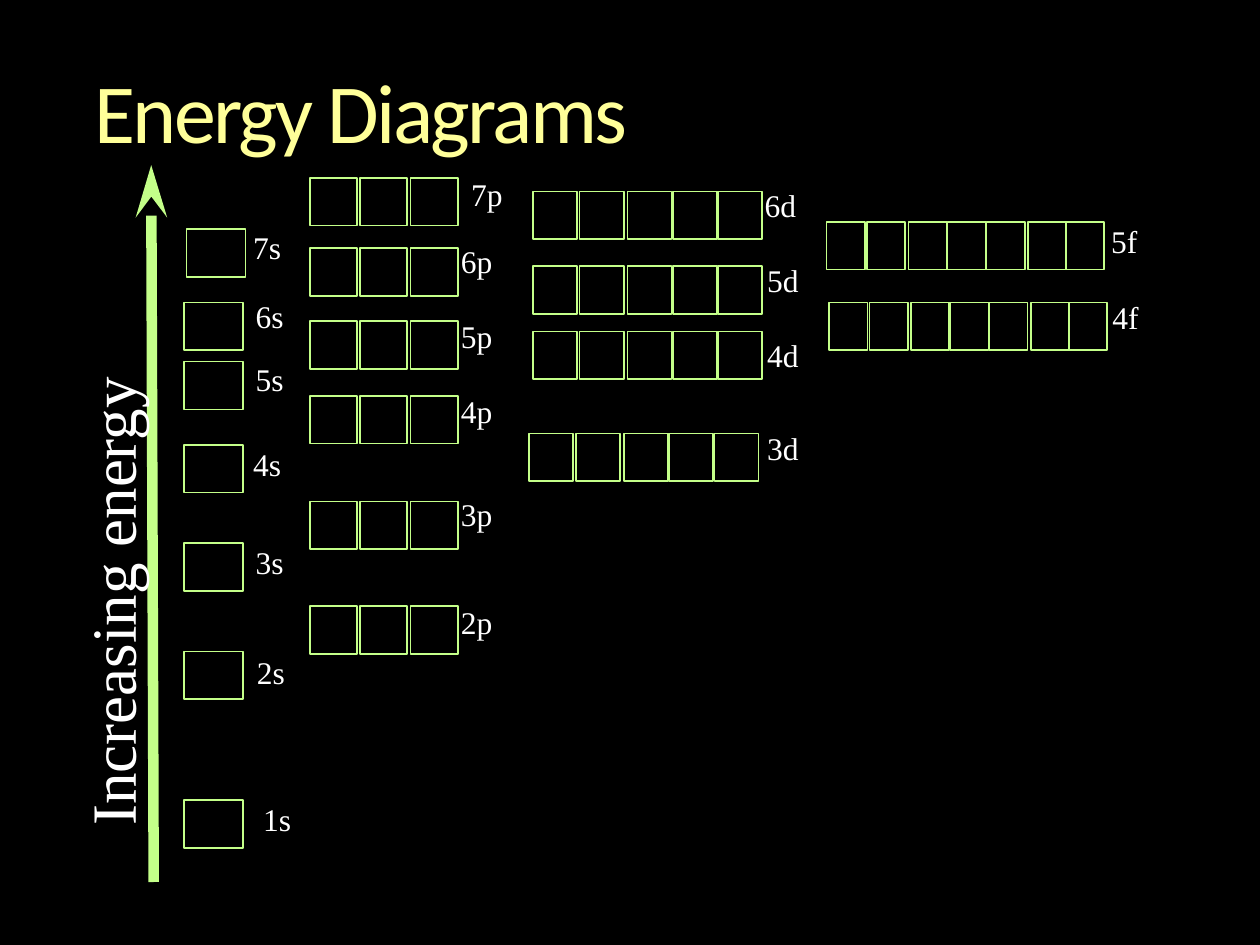
from lxml import etree
from pptx import Presentation
from pptx.dml.color import RGBColor
from pptx.enum.shapes import MSO_CONNECTOR as CONNECTOR, MSO_SHAPE as SHAPE
from pptx.oxml.ns import qn
from pptx.util import Inches, Pt

BLACK = RGBColor(0x00, 0x00, 0x00)
WHITE = RGBColor(0xFF, 0xFF, 0xFF)
GREEN = RGBColor(0xC4, 0xFF, 0x89)
YELLOW = RGBColor(0xFF, 0xFF, 0x99)
SERIF = "Times New Roman"

deck = Presentation()
deck.slide_width, deck.slide_height = Inches(10), Inches(7.5)
page = deck.slides.add_slide(deck.slide_layouts[6])
page.background.fill.solid()
page.background.fill.fore_color.rgb = BLACK

# The page is a grid of 100 columns by 75 rows
COLUMN = deck.slide_width / 100
ROW = deck.slide_height / 75


def place(left, top, width, height):
    return (round(left * COLUMN), round(top * ROW),
            round(width * COLUMN), round(height * ROW))


def add_label(text, left, top, width, height, size, font=SERIF, color=WHITE):
    box = page.shapes.add_textbox(*place(left, top, width, height))
    box.text_frame.word_wrap = True
    para = box.text_frame.paragraphs[0]
    para.text = text
    span = para.runs[0]
    span.font.size, span.font.name = Pt(size), font
    span.font.color.rgb = color
    return box


# Energy axis, pointing up
axis = page.shapes.add_connector(
    CONNECTOR.STRAIGHT, *place(12, 13.1, 12.2, 70))
axis.line.color.rgb = GREEN
axis.line.width = Pt(6)
etree.SubElement(axis.line._get_or_add_ln(), qn("a:headEnd"),
                 type="stealth", w="med", len="lg")
etree.SubElement(axis._element.spPr, qn("a:effectLst"))
axis_label = add_label("Increasing energy", -11.5, 42.7, 40.6, 7, 36)
axis_label.rotation = 270

# Per subshell: offsets of its orbitals, orbital width, label width
SUBSHELLS = {
    "s": ([0], 4.7, 8.8),
    "p": ([0, 3.95, 7.98], 3.75, 6.9),
    "d": ([0, 3.7, 7.5, 11.1, 14.7], 3.5, 6.8),
    "f": ([0, 3.2, 6.5, 9.6, 12.7, 16, 19], 3.05, 6.8),
}
ORBITAL_HEIGHT = 3.8

# Name, left and top of the orbitals, left and top of the label
LEVELS = [
    ("1s", 14.6, 63.5, 19.9, 63),
    ("2s", 14.6, 51.7, 19.4, 51.3),
    ("3s", 14.6, 43.1, 19.3, 42.6),
    ("4s", 14.6, 35.3, 19.1, 34.8),
    ("5s", 14.6, 28.7, 19.3, 28.1),
    ("6s", 14.6, 24, 19.3, 23.1),
    ("7s", 14.8, 18.2, 19.1, 17.6),
    ("2p", 24.6, 48.1, 35.6, 47.4),
    ("3p", 24.6, 39.8, 35.6, 38.8),
    ("4p", 24.6, 31.4, 35.6, 30.6),
    ("5p", 24.6, 25.5, 35.6, 24.7),
    ("6p", 24.6, 19.7, 35.6, 18.7),
    ("7p", 24.6, 14.1, 36.4, 13.4),
    ("3d", 42, 34.4, 59.9, 33.6),
    ("4d", 42.3, 26.3, 59.9, 26.2),
    ("5d", 42.3, 21.1, 59.9, 20.2),
    ("6d", 42.3, 15.2, 59.7, 14.3),
    ("4f", 65.8, 24, 87.3, 23.2),
    ("5f", 65.6, 17.6, 87.2, 17.1),
]

for name, left, top, label_left, label_top in LEVELS:
    offsets, orbital_width, label_width = SUBSHELLS[name[-1]]
    for offset in offsets:
        orbital = page.shapes.add_shape(
            SHAPE.RECTANGLE,
            *place(left + offset, top, orbital_width, ORBITAL_HEIGHT))
        orbital.shadow.inherit = False
        orbital.fill.background()
        orbital.line.color.rgb = GREEN
        orbital.line.width = Pt(1)
    add_label(name, label_left, label_top, label_width, 4, 18)

# Title
title = add_label("Energy Diagrams", 7.5, 5.6, 85, 8.4, 48, "Calibri", YELLOW)
frame = title.text_frame
frame.margin_left = frame.margin_right = 0
frame.margin_top = frame.margin_bottom = 0
frame.paragraphs[0].line_spacing = 0.9
frame.paragraphs[0].runs[0].font._element.set("spc", "-150")

deck.save("out.pptx")
